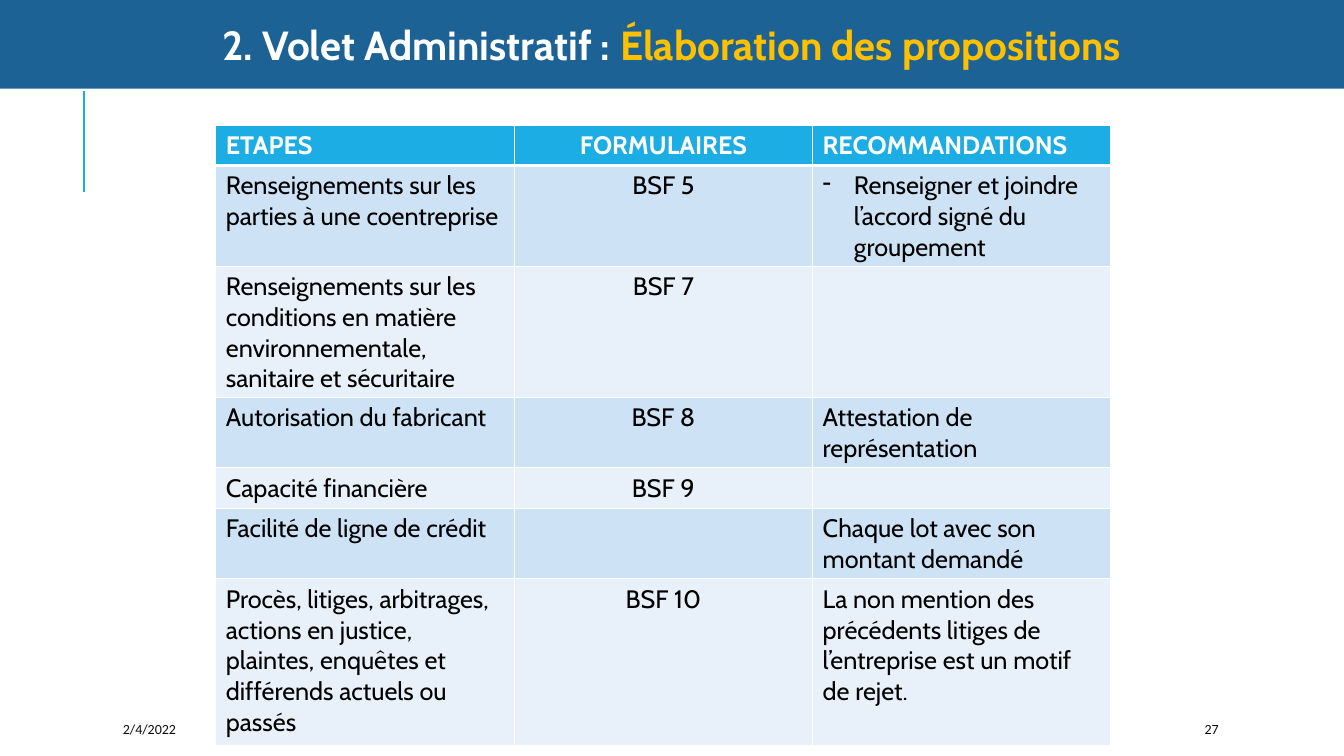
"""Build the slide on drafting proposals, with its table of forms."""
from dataclasses import dataclass

from lxml import etree
from pptx import Presentation
from pptx.dml.color import RGBColor
from pptx.enum.shapes import MSO_CONNECTOR, MSO_SHAPE
from pptx.enum.text import MSO_ANCHOR, PP_ALIGN
from pptx.oxml.ns import qn
from pptx.slide import Slide
from pptx.table import _Cell
from pptx.text.text import TextFrame
from pptx.util import Inches, Pt

LEFT, CENTER = PP_ALIGN.LEFT, PP_ALIGN.CENTER
MIDDLE = MSO_ANCHOR.MIDDLE
RECT = MSO_SHAPE.RECTANGLE
STRAIGHT = MSO_CONNECTOR.STRAIGHT


@dataclass(frozen=True)
class Theme:
    """Colours, fonts and type sizes of the slide."""
    banner: str = "1D6294"
    accent: str = "1CADE4"
    gold: str = "FFC000"
    white: str = "FFFFFF"
    black: str = "000000"
    note: str = "0D0D0D"
    bands: tuple[str, str] = ("CDE3F5", "E8F1FA")
    main: str = "Cabin"
    small: str = "Calibri"
    title_size: float = 29
    cell_size: float = 18
    note_size: float = 10


@dataclass(frozen=True)
class Step:
    """One row of the table."""
    name: str
    form: str
    advice: str
    height: float
    bullet: str = ""


@dataclass(frozen=True)
class Note:
    """One small text at the foot of the slide."""
    text: str
    left: float
    width: float


THEME = Theme()
HEAD = Step("ETAPES", "FORMULAIRES", "RECOMMANDATIONS", 0.38)
STEPS = [
    Step("Renseignements sur les parties à une coentreprise", "BSF 5",
         "Renseigner et joindre l’accord signé du groupement", 0.87, "-"),
    Step("Renseignements sur les conditions en matière environnementale, "
         "sanitaire et sécuritaire", "BSF 7", "", 1.23),
    Step("Autorisation du fabricant", "BSF 8",
         "Attestation de représentation", 0.66),
    Step("Capacité financière", "BSF 9", "", 0.38),
    Step("Facilité de ligne de crédit", "",
         "Chaque lot avec son montant demandé", 0.66),
    Step("Procès, litiges, arbitrages, actions en justice, plaintes, "
         "enquêtes et différends actuels ou passés", "BSF 10",
         "La non mention des précédents litiges de l’entreprise est un "
         "motif de rejet.", 1.65),
]
NOTES = [Note("2/4/2022", 1.12, 2.36), Note("27", 11.85, 1.06)]


def write(frame: TextFrame, text: str, *, color: str, size: float,
          font: str = THEME.main, bold: bool = False,
          align: PP_ALIGN = LEFT, bullet: str = "") -> None:
    """Add a formatted run to the first paragraph of a frame."""
    frame.word_wrap = True
    para = frame.paragraphs[0]
    para.alignment = align
    if bullet:
        props = para._p.get_or_add_pPr()
        props.set("marL", str(Inches(0.31)))
        props.set("indent", str(Inches(-0.31)))
        etree.SubElement(props, qn("a:buChar")).set("char", bullet)
    run = para.add_run()
    run.text = text
    run.font.name = font
    run.font.size = Pt(size)
    run.font.bold = bold
    run.font.color.rgb = RGBColor.from_string(color)


def draw_rule(slide: Slide) -> None:
    """Draw the upright accent line."""
    rule = slide.shapes.add_connector(
        STRAIGHT, Inches(0.83), Inches(1.9), Inches(0.83), Inches(0.9))
    rule.line.color.rgb = RGBColor.from_string(THEME.accent)
    rule.line.width = Pt(1.5)
    etree.SubElement(rule._element.spPr, qn("a:effectLst"))


def draw_note(slide: Slide, note: Note) -> None:
    """Draw one foot text."""
    box = slide.shapes.add_textbox(
        Inches(note.left), Inches(7.08), Inches(note.width), Inches(0.3))
    box.text_frame.vertical_anchor = MIDDLE
    write(box.text_frame, note.text, color=THEME.note,
          size=THEME.note_size, font=THEME.small)


def draw_title(slide: Slide) -> None:
    """Draw the banner with its title in two colours."""
    bar = slide.shapes.add_shape(RECT, 0, 0, Inches(13.33), Inches(0.88))
    bar.shadow.inherit = False
    bar.fill.solid()
    bar.fill.fore_color.rgb = RGBColor.from_string(THEME.banner)
    bar.line.fill.background()
    frame = bar.text_frame
    frame.vertical_anchor = MIDDLE
    frame.margin_left = frame.margin_right = Inches(0.11)
    frame.margin_top = frame.margin_bottom = Inches(0.06)
    for text, color in (("2. Volet Administratif : ", THEME.white),
                        ("Élaboration des propositions", THEME.gold)):
        write(frame, text, color=color, size=THEME.title_size,
              bold=True, align=CENTER)


def style_cell(cell: _Cell, fill: str, top: float, base: float) -> None:
    """Set the borders and fill of a cell."""
    props = cell._tc.get_or_add_tcPr()
    for side, width in (("L", 1), ("R", 1), ("T", top), ("B", base)):
        edge = etree.SubElement(props, qn(f"a:ln{side}"), w=str(Pt(width)))
        solid = etree.SubElement(edge, qn("a:solidFill"))
        etree.SubElement(solid, qn("a:srgbClr"), val=THEME.white)
    cell.fill.solid()
    cell.fill.fore_color.rgb = RGBColor.from_string(fill)


def draw_table(slide: Slide) -> None:
    """Draw the table of steps, forms and advice."""
    rows = [HEAD, *STEPS]
    table = slide.shapes.add_table(
        len(rows), 3, Inches(2.14), Inches(1.24), Inches(8.88),
        Inches(sum(step.height for step in rows))).table
    table.horz_banding = False
    for col in table.columns:
        col.width = Inches(2.96)
    for i, step in enumerate(rows):
        table.rows[i].height = Inches(step.height)
        head = i == 0
        fill = THEME.accent if head else THEME.bands[(i - 1) % 2]
        for j, text in enumerate((step.name, step.form, step.advice)):
            cell = table.cell(i, j)
            style_cell(cell, fill, 3 if i == 1 else 1, 3 if head else 1)
            if text:
                write(cell.text_frame, text, size=THEME.cell_size, bold=head,
                      color=THEME.white if head else THEME.black,
                      align=CENTER if j == 1 else LEFT,
                      bullet=step.bullet if j == 2 else "")


def main() -> None:
    """Build and save the slide."""
    deck = Presentation()
    deck.slide_width = Inches(13.33)
    deck.slide_height = Inches(7.5)
    slide = deck.slides.add_slide(deck.slide_layouts[6])
    draw_rule(slide)
    for note in NOTES:
        draw_note(slide, note)
    draw_title(slide)
    draw_table(slide)
    deck.save("out.pptx")


if __name__ == "__main__":
    main()
